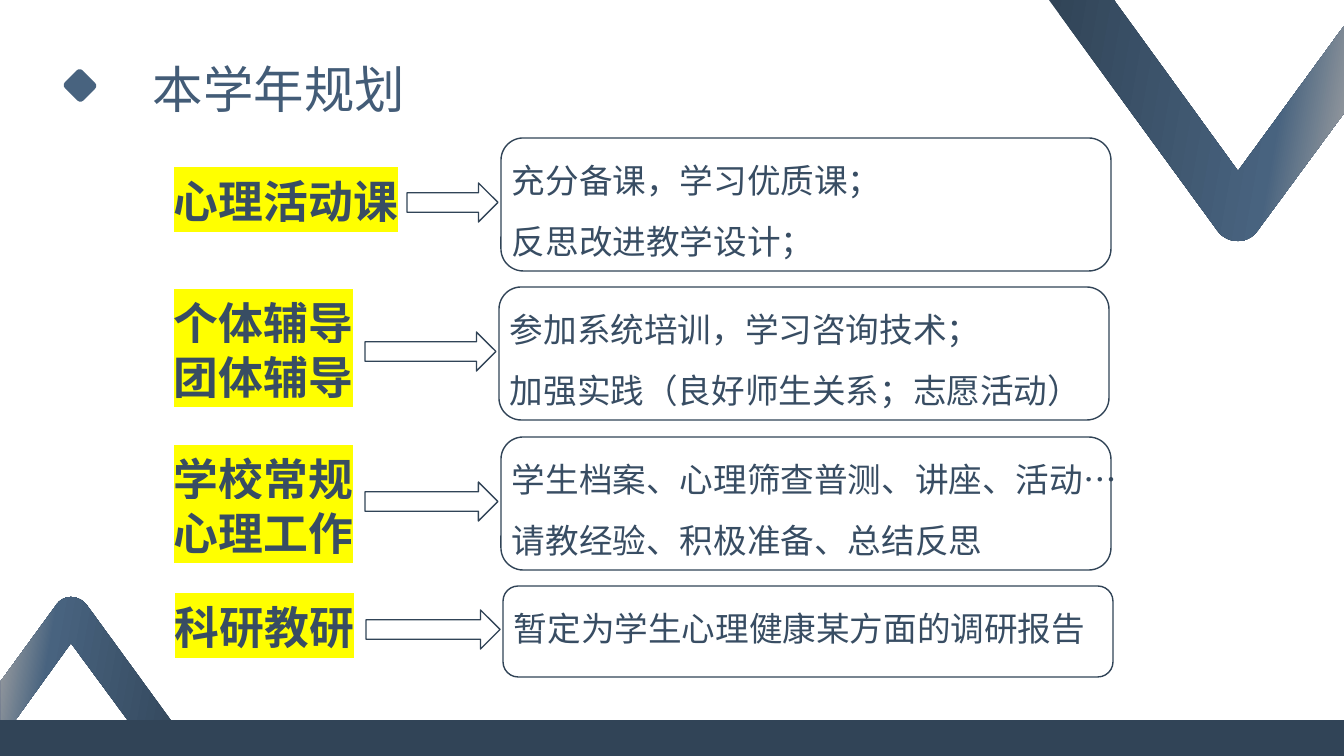
import lxml.etree
import pptx
import pptx.dml.color
import pptx.enum.lang
import pptx.enum.shapes
import pptx.enum.text
import pptx.oxml.ns
import pptx.util

RGBColor = pptx.dml.color.RGBColor
MSO_SHAPE = pptx.enum.shapes.MSO_SHAPE

NAVY = RGBColor(0x31, 0x44, 0x57)
STEEL = RGBColor(0x48, 0x63, 0x7F)
GREY = RGBColor(0xA5, 0xA5, 0xA5)
TITLE_BLUE = RGBColor(0x43, 0x5C, 0x77)
INK = RGBColor(0x38, 0x4D, 0x63)
YELLOW = RGBColor(0xFF, 0xFF, 0x00)

PX = 914400 / 100.8  # EMU in one px
UNITS = 10  # freeform units in one px
CURVE_STEPS = 8

TITLE_STYLE = {"name": "Noto Sans CJK JP", "size": pptx.util.Pt(36)}
LABEL_STYLE = {"name": "Noto Sans CJK SC", "size": pptx.util.Pt(32), "bold": True}
NOTE_STYLE = {"name": "Noto Sans CJK SC", "size": pptx.util.Pt(24)}
FRAME_FORMAT = {"width": pptx.util.Pt(1)}


def emu(px):
    return round(px * PX)


def bezier(p0, p1, p2, p3):
    """Points along a cubic curve, without its start."""
    points = []
    for step in range(1, CURVE_STEPS + 1):
        t = step / CURVE_STEPS
        weights = ((1 - t) ** 3, 3 * t * (1 - t) ** 2, 3 * t * t * (1 - t), t ** 3)
        points.append(tuple(sum(w * p[axis] for w, p in zip(weights, (p0, p1, p2, p3)))
                            for axis in (0, 1)))
    return points


class PlanSlide:
    def __init__(self, slide):
        self.shapes = slide.shapes

    def set_format(self, target, values):
        for key, value in values.items():
            setattr(target, key, value)

    def shape(self, kind, left, top, width, height, fill=None, line=None, rotation=0):
        shape = self.shapes.add_shape(kind, *map(emu, (left, top, width, height)))
        shape.shadow.inherit = False
        shape.rotation = rotation
        if fill is None:
            shape.fill.background()
        else:
            shape.fill.solid()
            shape.fill.fore_color.rgb = fill
        if line is None:
            shape.line.fill.background()
        else:
            shape.line.color.rgb = line
            self.set_format(shape.line, FRAME_FORMAT)

    def text(self, lines, left, top, width, height, style, color, spacing=None, highlight=None):
        frame = self.shapes.add_textbox(*map(emu, (left, top, width, height))).text_frame
        self.set_format(frame, {"word_wrap": True,
                                "auto_size": pptx.enum.text.MSO_AUTO_SIZE.SHAPE_TO_FIT_TEXT})
        for index, line in enumerate(lines):
            paragraph = frame.add_paragraph() if index else frame.paragraphs[0]
            paragraph.line_spacing = spacing
            run = paragraph.add_run()
            run.text = line
            self.set_format(run.font, style)
            run.font.language_id = pptx.enum.lang.MSO_LANGUAGE_ID.SIMPLIFIED_CHINESE
            run.font.color.rgb = color
            # East Asian font and highlight
            latin = run.font._element.find(pptx.oxml.ns.qn("a:latin"))
            east_asian = lxml.etree.Element(pptx.oxml.ns.qn("a:ea"), typeface=style["name"])
            latin.addnext(east_asian)
            if highlight is not None:
                mark = lxml.etree.Element(pptx.oxml.ns.qn("a:highlight"))
                lxml.etree.SubElement(mark, pptx.oxml.ns.qn("a:srgbClr"), val=str(highlight))
                latin.addprevious(mark)

    def chevron(self, tip, legs, rotation=0):
        """A rounded tip of two joined curves, then the straight legs."""
        points = [tip[0], *bezier(*tip[:4]), *bezier(*tip[3:]), *legs]
        if rotation == 180:
            xs, ys = zip(*points)
            points = [(min(xs) + max(xs) - x, min(ys) + max(ys) - y) for x, y in points]
        points = [(x * UNITS, y * UNITS) for x, y in points]
        builder = self.shapes.build_freeform(*points[0], scale=PX / UNITS)
        builder.add_line_segments(points[1:], close=True)
        chevron = builder.convert_to_shape()
        chevron.rotation = rotation
        chevron.shadow.inherit = False
        chevron.line.fill.background()
        # Three-stop gradient
        properties = chevron._element.spPr
        gradient = lxml.etree.Element(pptx.oxml.ns.qn("a:gradFill"), rotWithShape="1")
        stops = lxml.etree.SubElement(gradient, pptx.oxml.ns.qn("a:gsLst"))
        for percent, color in ((0, NAVY), (74, STEEL), (100, GREY)):
            stop = lxml.etree.SubElement(stops, pptx.oxml.ns.qn("a:gs"), pos=str(percent * 1000))
            lxml.etree.SubElement(stop, pptx.oxml.ns.qn("a:srgbClr"), val=str(color))
        lxml.etree.SubElement(gradient, pptx.oxml.ns.qn("a:lin"), ang=str(190 * 60000), scaled="0")
        properties.find(pptx.oxml.ns.qn("a:custGeom")).addnext(gradient)

    def plan_row(self, label, label_box, notes, note_width, frame_box, arrow_left):
        frame_left, frame_top, frame_height = frame_box
        label_left, label_top, label_width = label_box
        self.text(label, label_left, label_top, label_width, 9 + 55 * len(label),
                  LABEL_STYLE, INK, highlight=YELLOW)
        self.text(notes, frame_left + 1, frame_top - 3, note_width, 12 + 60 * len(notes),
                  NOTE_STYLE, INK, spacing=1.5)
        self.shape(MSO_SHAPE.ROUNDED_RECTANGLE, frame_left, frame_top, 610, frame_height, line=NAVY)
        self.shape(MSO_SHAPE.RIGHT_ARROW, arrow_left, frame_top + frame_height // 2 - 21,
                   frame_left - 3 - arrow_left, 39, line=NAVY)


PLAN = [
    (["心理活动课"], (164, 169, 285),
     ["充分备课，学习优质课；", "反思改进教学设计；"], 504, (501, 138, 133), 407),
    (["个体辅导", "团体辅导"], (164, 291, 225),
     ["参加系统培训，学习咨询技术；", "加强实践（良好师生关系；志愿活动）"], 611, (499, 287, 133), 365),
    (["学校常规", "心理工作"], (164, 447, 309),
     ["学生档案、心理筛查普测、讲座、活动…", "请教经验、积极准备、总结反思"], 649, (501, 437, 133), 365),
    (["科研教研"], (165, 595, 309),
     ["暂定为学生心理健康某方面的调研报告"], 649, (503, 586, 91), 366),
]


def main():
    deck = pptx.Presentation()
    deck.slide_width, deck.slide_height = emu(1344), emu(756)
    plan = PlanSlide(deck.slides.add_slide(deck.slide_layouts[6]))

    # Corner chevrons
    plan.chevron([(86, 604), (82, 600), (77, 597), (71, 597), (65, 597), (60, 600), (57, 604)],
                 [(1, 681), (1, 740), (71, 643), (154, 756), (197, 756)])
    plan.chevron([(1217, 230), (1222, 237), (1229, 241), (1238, 241),
                  (1246, 241), (1253, 237), (1258, 230)],
                 [(1344, 113), (1344, 26), (1238, 171), (1114, 0), (1049, 0)], rotation=180)

    # Title marker, bottom band and title
    plan.shape(MSO_SHAPE.ROUNDED_RECTANGLE, 67, 73, 26, 25, fill=STEEL, rotation=45)
    plan.shape(MSO_SHAPE.RECTANGLE, 0, 720, 1344, 36, fill=NAVY)
    plan.text(["本学年规划"], 143, 53, 753, 72, TITLE_STYLE, TITLE_BLUE)

    # Labels, arrows and framed notes
    for row in PLAN:
        plan.plan_row(*row)

    deck.save("out.pptx")


if __name__ == "__main__":
    main()
